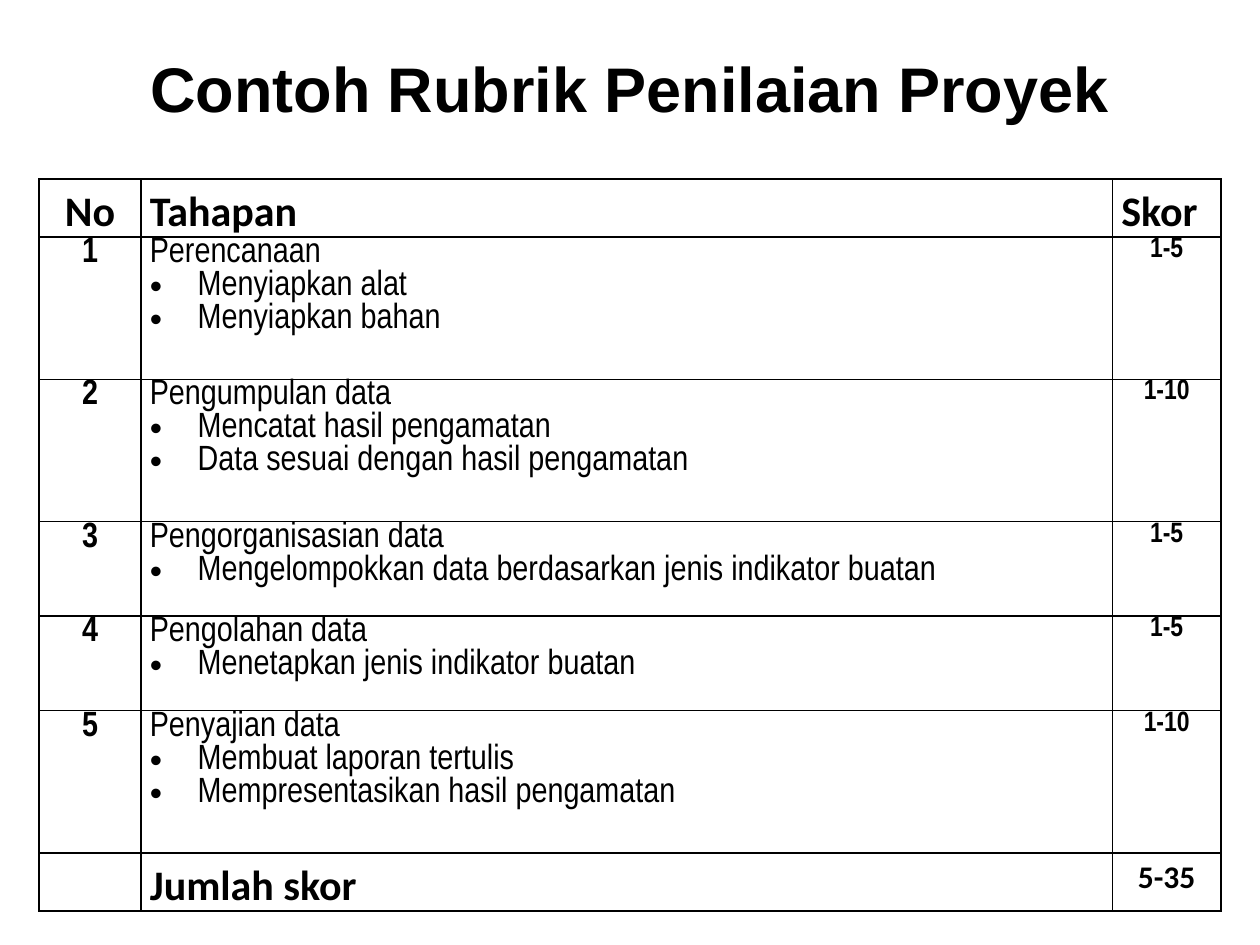
"""Build the project assessment rubric slide."""
import lxml.etree
import pptx
import pptx.dml.color
import pptx.enum.text
import pptx.oxml.ns
import pptx.util

Inches = pptx.util.Inches
Pt = pptx.util.Pt
CENTER = pptx.enum.text.PP_ALIGN.CENTER
LEFT = pptx.enum.text.PP_ALIGN.LEFT
MIDDLE = pptx.enum.text.MSO_ANCHOR.MIDDLE
qn = pptx.oxml.ns.qn

BLACK = "000000"
TITLE = "Contoh Rubrik Penilaian Proyek"
HEADER = ("No", "Tahapan", "Skor")
STAGES = [
    ("Perencanaan", ["Menyiapkan alat", "Menyiapkan bahan"], "1-5"),
    ("Pengumpulan data",
     ["Mencatat hasil pengamatan", "Data sesuai dengan hasil pengamatan"], "1-10"),
    ("Pengorganisasian data",
     ["Mengelompokkan data berdasarkan jenis indikator buatan"], "1-5"),
    ("Pengolahan data", ["Menetapkan jenis indikator buatan"], "1-5"),
    ("Penyajian data",
     ["Membuat laporan tertulis", "Mempresentasikan hasil pengamatan"], "1-10"),
]
TOTAL = ("Jumlah skor", "5-35")
COL_WIDTHS = (0.81, 7.71, 0.86)
END_ROW = 0.46
INDENT = 0.38


def rgb(value):
    return pptx.dml.color.RGBColor.from_string(value)


def add_run(p, text, size, font, bold=True):
    r = p.add_run()
    r.text = text
    r.font.size = Pt(size)
    r.font.name = font
    r.font.bold = bold
    r.font.color.rgb = rgb(BLACK)


def add_bullet(p):
    pPr = p._p.get_or_add_pPr()
    pPr.set("marL", str(Inches(INDENT)))
    pPr.set("indent", str(-Inches(INDENT)))
    lxml.etree.SubElement(pPr, qn("a:buFont"), typeface="Arial")
    lxml.etree.SubElement(pPr, qn("a:buChar"), char="•")


def format_cell(cell):
    cell.margin_left = cell.margin_right = Inches(0.07)
    cell.margin_top = cell.margin_bottom = 0
    tcPr = cell._tc.get_or_add_tcPr()
    for side in ("lnL", "lnR", "lnT", "lnB"):
        ln = lxml.etree.SubElement(tcPr, qn(f"a:{side}"), w=str(Pt(1)))
        fill = lxml.etree.SubElement(ln, qn("a:solidFill"))
        lxml.etree.SubElement(fill, qn("a:srgbClr"), val=BLACK)
    cell.fill.background()


def write_cell(cell, text, size, font, align=CENTER, bold=True, spacing=None):
    p = cell.text_frame.paragraphs[0]
    p.alignment = align
    if spacing:
        p.line_spacing = spacing
    add_run(p, text, size, font, bold)


def add_title(s):
    sp = s.shapes.add_textbox(Inches(0.5), Inches(0.3), Inches(9), Inches(0.79))
    tf = sp.text_frame
    tf.word_wrap = True
    tf.vertical_anchor = MIDDLE
    p = tf.paragraphs[0]
    p.alignment = CENTER
    add_run(p, TITLE, 36, "Arial")


def add_rubric(s):
    heights = [END_ROW, *(0.37 + INDENT * len(items) for _, items, _ in STAGES), END_ROW]
    table = s.shapes.add_table(
        len(heights), len(COL_WIDTHS), Inches(0.31), Inches(1.42),
        Inches(sum(COL_WIDTHS)), Inches(sum(heights))).table
    table.first_row = table.horz_banding = False
    for col, width in zip(table.columns, COL_WIDTHS):
        col.width = Inches(width)
    for row, height in zip(table.rows, heights):
        row.height = Inches(height)
    for cell in table.iter_cells():
        format_cell(cell)

    for col, (text, align) in enumerate(zip(HEADER, (CENTER, LEFT, LEFT))):
        write_cell(table.cell(0, col), text, 24, "Calibri", align, spacing=1.15)
    for row, (stage, items, score) in enumerate(STAGES, 1):
        write_cell(table.cell(row, 0), str(row), 20, "Arial Narrow")
        write_cell(table.cell(row, 1), stage, 20, "Arial Narrow", LEFT, bold=False)
        write_cell(table.cell(row, 2), score, 16, "Arial Narrow")
        for item in items:
            p = table.cell(row, 1).text_frame.add_paragraph()
            add_bullet(p)
            add_run(p, item, 20, "Arial Narrow", bold=False)
    last = len(heights) - 1
    write_cell(table.cell(last, 1), TOTAL[0], 24, "Calibri", LEFT, spacing=1.15)
    write_cell(table.cell(last, 2), TOTAL[1], 18, "Calibri", spacing=1.15)


def main():
    prs = pptx.Presentation()
    prs.slide_width, prs.slide_height = Inches(10), Inches(7.5)
    s = prs.slides.add_slide(prs.slide_layouts[6])
    add_title(s)
    add_rubric(s)
    prs.save("out.pptx")


if __name__ == "__main__":
    main()
